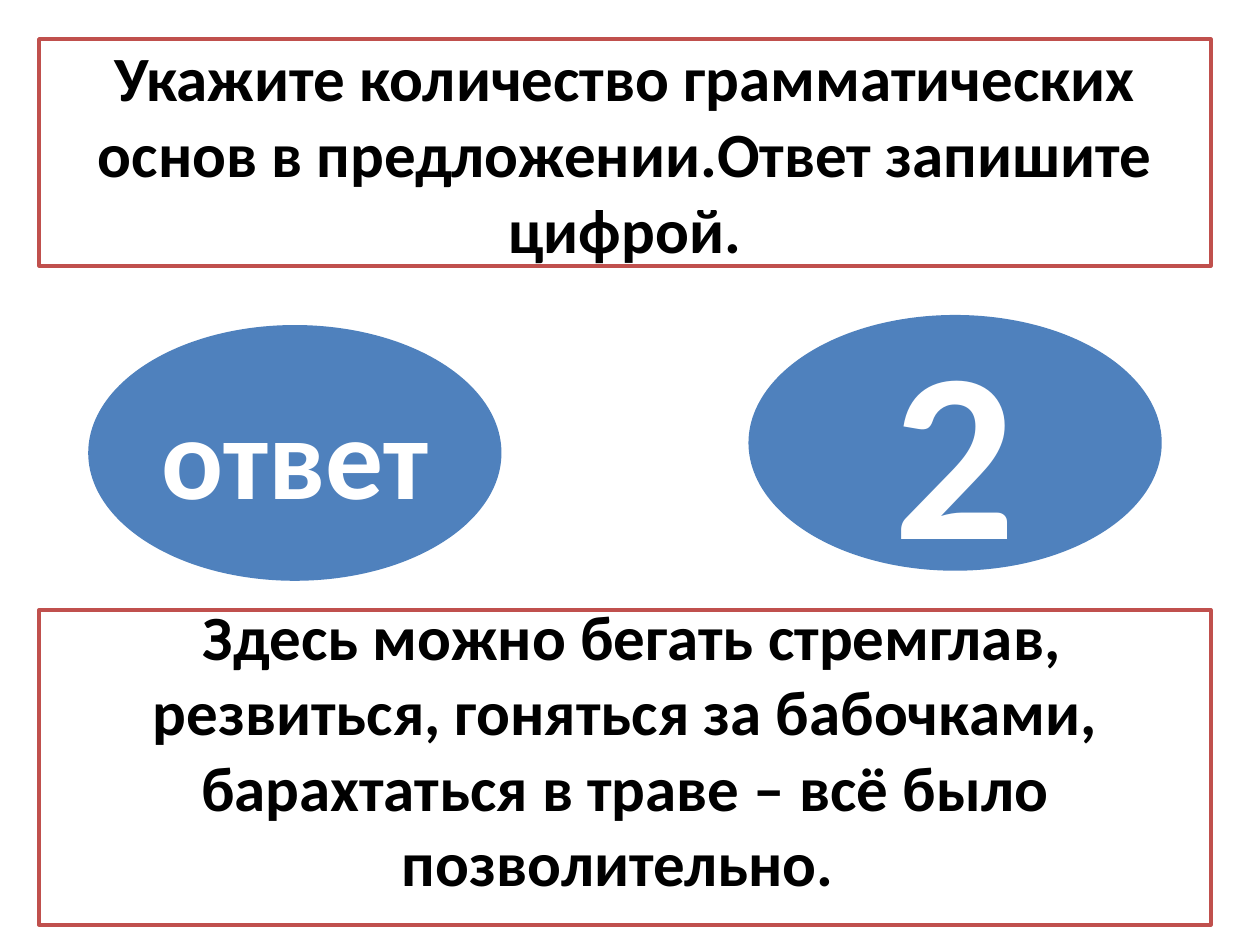
from pptx import Presentation
from pptx.dml.color import RGBColor
from pptx.enum.shapes import MSO_SHAPE
from pptx.enum.text import MSO_ANCHOR, PP_ALIGN
from pptx.util import Inches, Pt

WHITE = RGBColor(0xFF, 0xFF, 0xFF)
BLACK = RGBColor(0x00, 0x00, 0x00)
RED = RGBColor(0xC0, 0x50, 0x4D)
BLUE = RGBColor(0x4F, 0x81, 0xBD)

# Framed panels: text, top, height, bottom inset
PANELS = [
    ("Укажите количество грамматических основ в предложении.Ответ запишите цифрой.",
     0.31, 1.8, 0.05),
    (" Здесь можно бегать стремглав, резвиться, гоняться за бабочками, "
     "барахтаться в траве – всё было позволительно. ",
     4.84, 2.5, 0.35),
]
PANEL_LEFT, PANEL_WIDTH = 0.31, 9.3

# Answer ovals: text, left, top, font size
OVALS = [
    ("ответ", 0.7, 2.58, 66),
    ("2", 5.94, 2.5, 138),
]
OVAL_WIDTH, OVAL_HEIGHT = 3.28, 2.03


def add_block(slide, preset, box, text, size, fill, color):
    block = slide.shapes.add_shape(preset, *map(Inches, box))
    block.shadow.inherit = False
    block.fill.solid()
    block.fill.fore_color.rgb = fill
    block.line.fill.background()
    frame = block.text_frame
    frame.word_wrap = True
    frame.vertical_anchor = MSO_ANCHOR.MIDDLE
    paragraph = frame.paragraphs[0]
    paragraph.alignment = PP_ALIGN.CENTER
    run = paragraph.add_run()
    run.text = text
    run.font.name = "Calibri"
    run.font.size = Pt(size)
    run.font.bold = True
    run.font.color.rgb = color
    return block


prs = Presentation()
prs.slide_width, prs.slide_height = Inches(10), Inches(7.5)
slide = prs.slides.add_slide(prs.slide_layouts[6])

# Task and sentence panels
for text, top, height, bottom_inset in PANELS:
    panel = add_block(slide, MSO_SHAPE.RECTANGLE,
                      (PANEL_LEFT, top, PANEL_WIDTH, height),
                      text, 36, WHITE, BLACK)
    panel.line.color.rgb = RED
    panel.line.width = Pt(2)
    panel.text_frame.margin_bottom = Inches(bottom_inset)

# Answer ovals
for text, left, top, size in OVALS:
    add_block(slide, MSO_SHAPE.OVAL, (left, top, OVAL_WIDTH, OVAL_HEIGHT),
              text, size, BLUE, WHITE)

prs.save("out.pptx")
